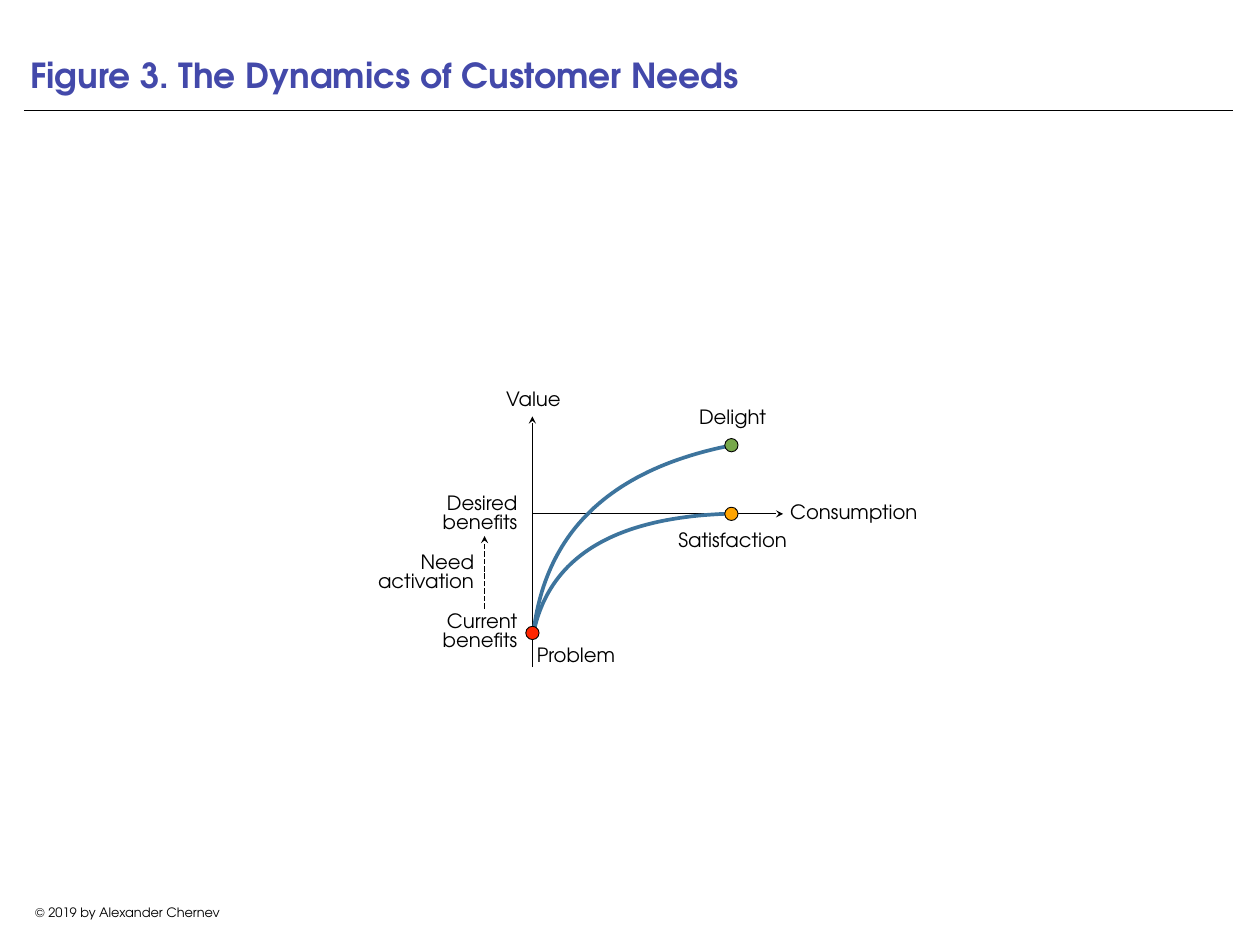
from dataclasses import dataclass

from lxml import etree
from pptx import Presentation
from pptx import util as u
from pptx.dml import color, fill
from pptx.enum import dml, shapes, text
from pptx.oxml import ns

Pt = u.Pt


@dataclass(frozen=True)
class Theme:
    font: str = "TeX Gyre Adventor"
    ink: str = "000000"
    paper: str = "FFFFFF"
    title: str = "4349AA"
    curve: str = "3D749D"
    problem: str = "FF2600"
    satisfaction: str = "FFA400"
    delight: str = "77A84B"
    title_size: float = 28
    label_size: float = 16
    footer_size: float = 10.5


T = Theme()
LEFT, CENTER, RIGHT = text.PP_ALIGN.LEFT, text.PP_ALIGN.CENTER, text.PP_ALIGN.RIGHT
TOP, MIDDLE, BOTTOM = text.MSO_ANCHOR.TOP, text.MSO_ANCHOR.MIDDLE, text.MSO_ANCHOR.BOTTOM


def rgb(value):
    return color.RGBColor.from_string(value)


def add_text(s, words, box, size=T.label_size, ink=T.ink, bold=False, align=LEFT,
             anchor=MIDDLE, inset=(0, 0), spacing=None, back=None, wrap=True):
    sp = s.shapes.add_textbox(*map(Pt, box))
    if back:
        sp.fill.solid()
        sp.fill.fore_color.rgb = rgb(back)
    tf = sp.text_frame
    tf.word_wrap = wrap
    tf.vertical_anchor = anchor
    tf.margin_left = tf.margin_right = Pt(inset[0])
    tf.margin_top = tf.margin_bottom = Pt(inset[1])
    p = tf.paragraphs[0]
    p.alignment = align
    if spacing:
        p.line_spacing = spacing
    r = p.add_run()
    r.text = words
    r.font.name = T.font
    r.font.size = Pt(size)
    r.font.bold = bold
    r.font.color.rgb = rgb(ink)


def add_line(s, start, end, width, arrow=False, dash=None):
    c = s.shapes.add_connector(shapes.MSO_CONNECTOR.STRAIGHT, *map(Pt, (*start, *end)))
    c.line.color.rgb = rgb(T.ink)
    c.line.width = Pt(width)
    if dash:
        c.line.dash_style = dash
    if arrow:
        ln = c.line._get_or_add_ln()
        etree.SubElement(ln, ns.qn("a:tailEnd"), type="stealth")
    etree.SubElement(c._element.spPr, ns.qn("a:effectLst"))


def add_curve(s, points, steps=48):
    def at(t):
        weights = ((1 - t) ** 3, 3 * t * (1 - t) ** 2, 3 * t * t * (1 - t), t ** 3)
        return tuple(Pt(sum(w * pt[i] for w, pt in zip(weights, points))) for i in (0, 1))

    path = [at(i / steps) for i in range(steps + 1)]
    builder = s.shapes.build_freeform(*path[0])
    builder.add_line_segments(path[1:], close=False)
    sp = builder.convert_to_shape()
    sp.shadow.inherit = False
    sp.fill.background()
    sp.line.color.rgb = rgb(T.curve)
    sp.line.width = Pt(3)


def add_dot(s, center, paint, size=10.8):
    x, y = center
    sp = s.shapes.add_shape(shapes.MSO_SHAPE.OVAL, Pt(x - size / 2), Pt(y - size / 2),
                            Pt(size), Pt(size))
    sp.shadow.inherit = False
    sp.fill.solid()
    sp.fill.fore_color.rgb = rgb(paint)
    sp.line.color.rgb = rgb(T.ink)
    sp.line.width = Pt(0.75)


def add_header(s, box):
    x, y, w, h = box
    add_text(s, "Figure 3. The Dynamics of Customer Needs", (x, y, w, h - 6.5),
             size=T.title_size, ink=T.title, bold=True, anchor=BOTTOM, inset=(5, 5))
    add_line(s, (x, y + h), (x + w, y + h), 0.5)


def add_footer(s, box):
    add_text(s, "© 2019 by Alexander Chernev", box, size=T.footer_size, align=CENTER,
             anchor=TOP, inset=(7.2, 3.6), wrap=False)


def add_needs_graph(s, box):
    left, top = box[:2]

    def at(x, y):
        return left + x, top + y

    axis_x, axis_y, end_x = 137.7, 103.6, 299.4
    add_line(s, at(axis_x, 228.2), at(axis_x, 24.4), 1, arrow=True)
    add_line(s, at(axis_x, axis_y), at(341.5, axis_y), 1, arrow=True)
    add_line(s, at(98.8, 180.6), at(98.8, 121.6), 1.5, arrow=True,
             dash=dml.MSO_LINE.SQUARE_DOT)

    labels = [
        ("Current benefits", 11, 178.5, 114.5, 42.5, RIGHT, None),
        ("Desired benefits", 11, 82.7, 114.5, 42.5, RIGHT, None),
        ("Need activation", 0.2, 133.1, 90, 37.4, RIGHT, T.paper),
        ("Value", 108.2, 0.6, 60.5, 21.6, CENTER, T.paper),
        ("Delight", 270.2, 15.8, 60.5, 21.6, CENTER, T.paper),
        ("Satisfaction", 251.5, 115.8, 98, 21.6, CENTER, T.paper),
        ("Consumption", 347.2, 92.8, 111, 21.6, LEFT, T.paper),
        ("Problem", 141.3, 208.7, 72, 22.3, LEFT, T.paper),
    ]
    for words, x, y, w, h, align, back in labels:
        add_text(s, words, (*at(x, y), w, h), align=align, spacing=0.8, back=back)

    curves = [
        ((147.8, 119.4), (199.6, 69), (294.7, 48.9)),
        ((150.7, 139.6), (202.5, 107.2), (294.7, axis_y)),
    ]
    for bends in curves:
        add_curve(s, [at(138.4, 201.5)] + [at(*pt) for pt in bends])

    dots = [
        (axis_x, 200.4, T.problem),
        (end_x, axis_y, T.satisfaction),
        (end_x, 47.8, T.delight),
    ]
    for x, y, paint in dots:
        add_dot(s, at(x, y), paint)


def main():
    prs = Presentation()
    prs.slide_width, prs.slide_height = Pt(1024), Pt(768)
    s = prs.slides.add_slide(prs.slide_layouts[6])
    add_footer(s, (19.5, 731.5, 168.5, 20))
    add_header(s, (19.5, 0, 982.5, 89.3))
    add_needs_graph(s, (295, 314, 459, 232))
    prs.save("out.pptx")


if __name__ == "__main__":
    main()
